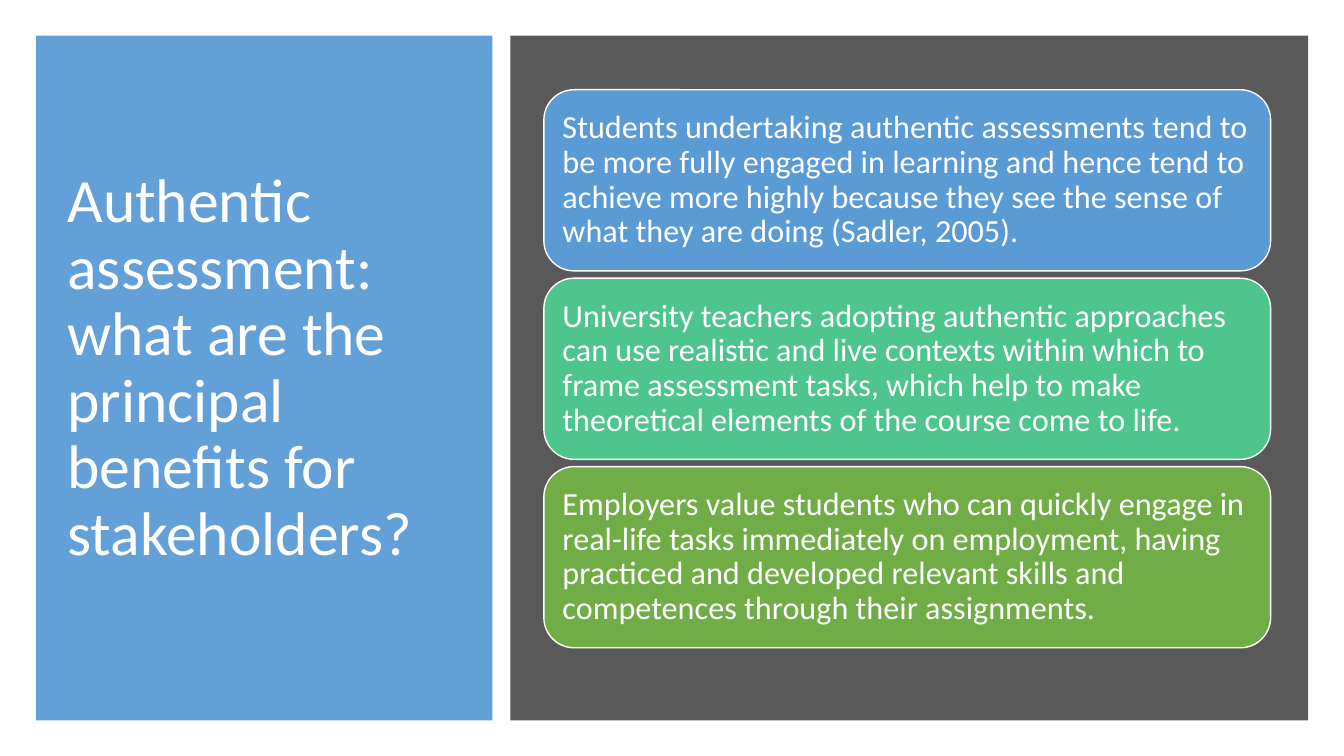
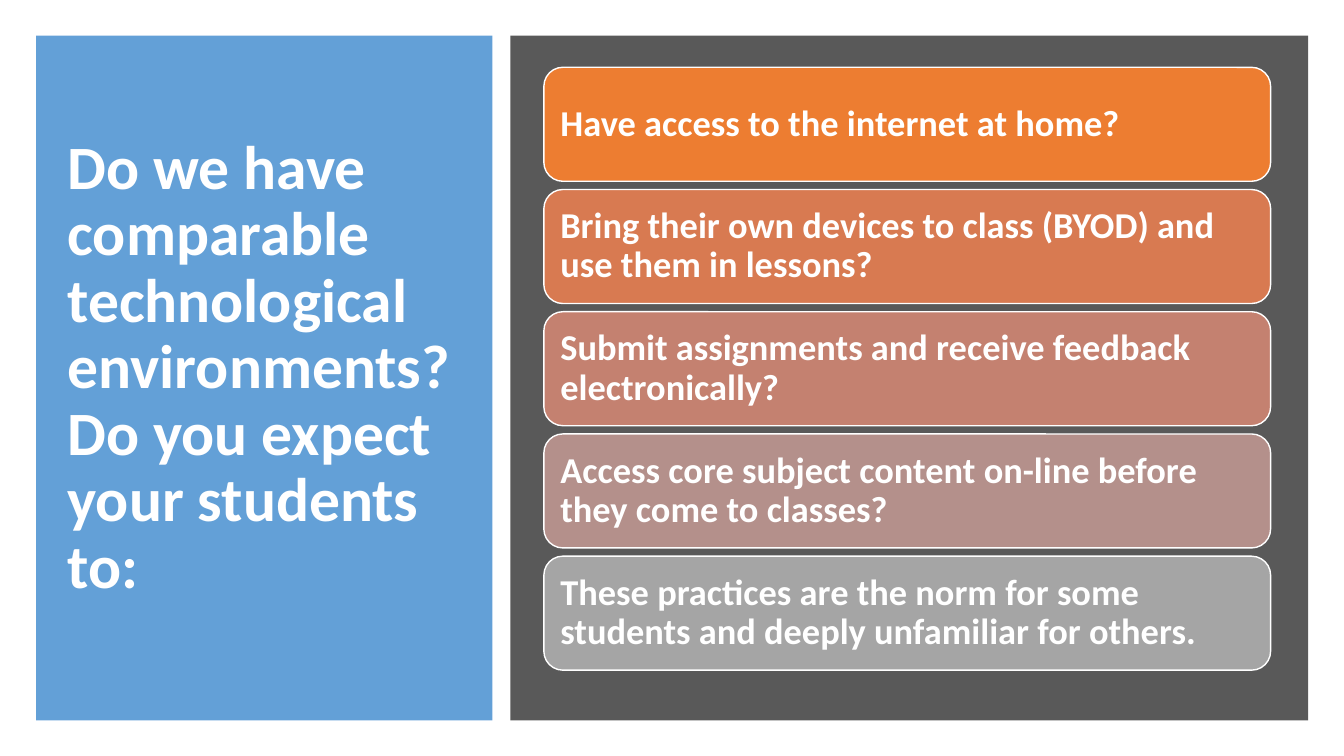
import pptx
import pptx.util
import pptx.dml.color
import pptx.enum.shapes
import pptx.enum.text
import pptx.oxml
import pptx.oxml.ns

Pt = pptx.util.Pt
RGBColor = pptx.dml.color.RGBColor
SHAPES = pptx.enum.shapes.MSO_SHAPE
TEXT = pptx.enum.text

WHITE = RGBColor(0xFF, 0xFF, 0xFF)
BLUE = RGBColor(0x5B, 0x9B, 0xD5)
CHARCOAL = RGBColor(0x59, 0x59, 0x59)
MINT = RGBColor(0x4D, 0xC5, 0x8D)
GREEN = RGBColor(0x70, 0xAD, 0x47)
ORANGE = RGBColor(0xED, 0x7D, 0x31)
TERRACOTTA = RGBColor(0xD8, 0x7A, 0x51)
ROSE = RGBColor(0xC4, 0x81, 0x70)
MAUVE = RGBColor(0xB4, 0x90, 0x8B)
GRAY = RGBColor(0xA5, 0xA5, 0xA5)

TITLE_PANEL = (25.8, 25.4, 326, 489.2)
CARD_PANEL = (364.5, 25.4, 570, 489.2)
TITLE_FONT = {"name": "Calibri", "size": Pt(44)}
CARD_FONT = {"name": "Calibri"}

PAGES = [
    {
        "title": "Authentic assessment: what are the principal benefits for stakeholders?",
        "bold": False,
        "cards": {"height": 129.4, "gap": 5.2, "size": 23, "inset": 7},
        "items": [
            ("Students undertaking authentic assessments tend to be more fully "
             "engaged in learning and hence tend to achieve more highly because "
             "they see the sense of what they are doing (Sadler, 2005).", BLUE),
            ("University teachers adopting authentic approaches can use realistic "
             "and live contexts within which to frame assessment tasks, which help "
             "to make theoretical elements of the course come to life.", MINT),
            ("Employers value students who can quickly engage in real-life tasks "
             "immediately on employment, having practiced and developed relevant "
             "skills and competences through their assignments.", GREEN),
        ],
    },
    {
        "title": "Do we have comparable technological environments? "
                 "Do you expect your students to:",
        "bold": True,
        "cards": {"height": 81.4, "gap": 5.9, "size": 26, "inset": 7.8},
        "items": [
            ("Have access to the internet at home?", ORANGE),
            ("Bring their own devices to class (BYOD) and use them in lessons?", TERRACOTTA),
            ("Submit assignments and receive feedback electronically?", ROSE),
            ("Access core subject content on-line before they come to classes?", MAUVE),
            ("These practices are the norm for some students and deeply "
             "unfamiliar for others.", GRAY),
        ],
    },
]


def set_values(target, values):
    """Set each named attribute of the target."""
    for name, value in values.items():
        setattr(target, name, value)


def place(shape, box):
    """Move and size a shape to a box given in points."""
    set_values(shape, dict(zip(("left", "top", "width", "height"), map(Pt, box))))


def add_block(page, preset, box, color):
    """Add a filled shape without line or shadow."""
    block = page.shapes.add_shape(preset, *map(Pt, box))
    block.shadow.inherit = False
    block.fill.solid()
    block.fill.fore_color.rgb = color
    block.line.fill.background()
    return block


def write_text(shape, text, font, insets):
    """Write one white, left-aligned paragraph centred vertically in a shape."""
    frame = shape.text_frame
    set_values(frame, {"word_wrap": True, "auto_size": TEXT.MSO_AUTO_SIZE.NONE,
                       "vertical_anchor": TEXT.MSO_ANCHOR.MIDDLE})
    sides = ("margin_left", "margin_top", "margin_right", "margin_bottom")
    set_values(frame, dict(zip(sides, map(Pt, insets))))
    para = frame.paragraphs[0]
    set_values(para, {"alignment": TEXT.PP_ALIGN.LEFT, "line_spacing": 0.9})
    span = para.add_run()
    span.text = text
    set_values(span.font, font)
    span.font.color.rgb = WHITE


def add_title_panel(page, box, text, bold):
    """Put the slide title on a slightly transparent blue panel."""
    left, top, width, height = box
    panel = add_block(page, SHAPES.RECTANGLE, box, BLUE)
    color = panel.element.spPr.find(".//" + pptx.oxml.ns.qn("a:srgbClr"))
    color.append(pptx.oxml.parse_xml(
        f'<a:alpha {pptx.oxml.ns.nsdecls("a")} val="95000"/>'))
    title = page.shapes.title
    title.element.addprevious(panel.element)
    place(title, (left + 15.2, top + 20.7, width - 33, height - 54.3))
    write_text(title, text, {**TITLE_FONT, "bold": bold}, (7.2, 3.6, 7.2, 3.6))


def add_card_panel(page, box, items, bold, height, gap, size, inset):
    """Stack equal rounded cards around a line just above the panel centre."""
    left, top, width, panel_height = box
    add_block(page, SHAPES.RECTANGLE, box, CHARCOAL)
    pitch = height + gap
    first = top + (panel_height - pitch * len(items) + gap) / 2 - 6.6
    font = {**CARD_FONT, "size": Pt(size), "bold": bold}
    for index, (text, color) in enumerate(items):
        card_box = (left + 24, first + index * pitch, width - 50.9, height)
        card = add_block(page, SHAPES.ROUNDED_RECTANGLE, card_box, color)
        card.line.color.rgb = WHITE
        card.line.width = Pt(1)
        write_text(card, text, font, [inset] * 4)


def add_page(deck, title, bold, cards, items):
    """Add a slide with a title panel and a panel of cards."""
    page = deck.slides.add_slide(deck.slide_layouts[5])
    add_title_panel(page, TITLE_PANEL, title, bold)
    add_card_panel(page, CARD_PANEL, items, bold, **cards)


def main():
    """Build and save the deck."""
    deck = pptx.Presentation()
    set_values(deck, {"slide_width": Pt(960), "slide_height": Pt(540)})
    for content in PAGES:
        add_page(deck, **content)
    deck.save("out.pptx")


if __name__ == "__main__":
    main()
